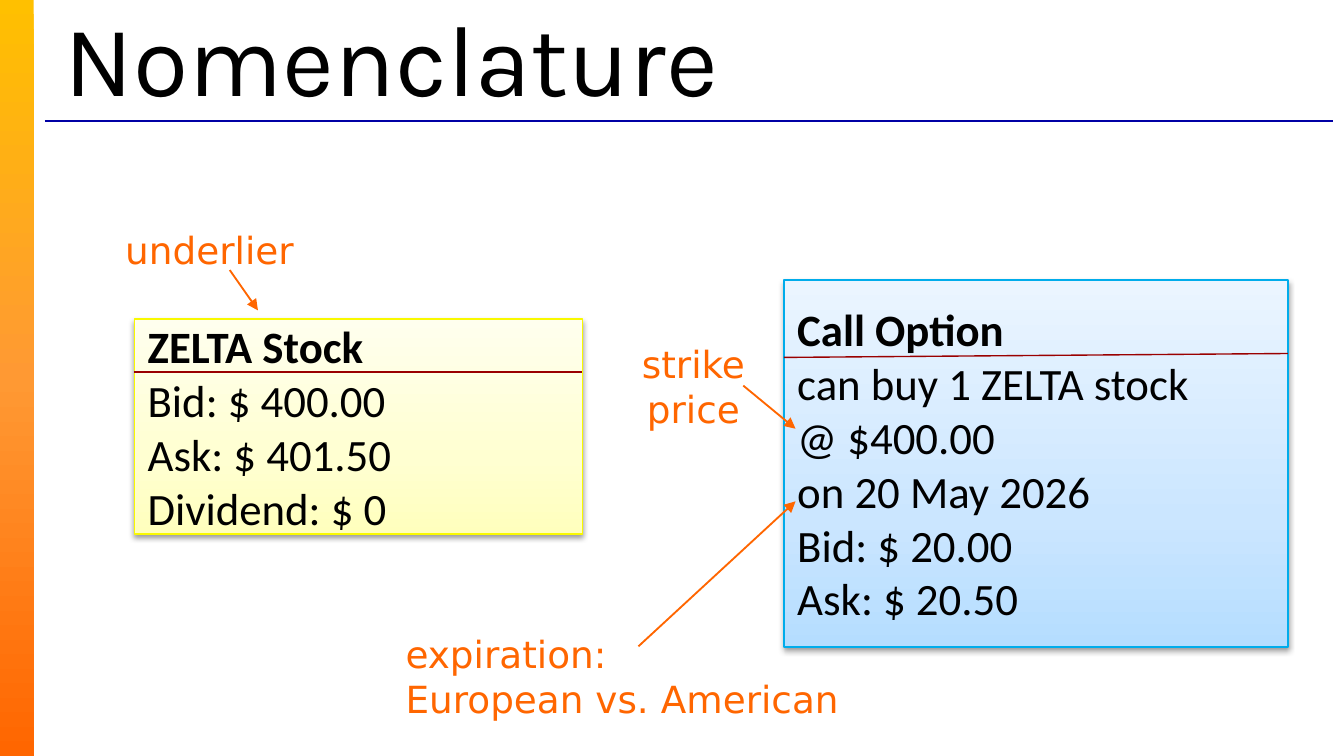
from lxml import etree
from pptx import Presentation
from pptx.dml.color import RGBColor
from pptx.enum import shapes, text
from pptx.oxml import parse_xml
from pptx.oxml.ns import nsdecls, qn
from pptx.util import Pt

ORANGE, DARK_RED, BLACK = "FF6600", "9A0000", "000000"
LEFT, CENTER = text.PP_ALIGN.LEFT, text.PP_ALIGN.CENTER


def color(value):
    return RGBColor.from_string(value)


def write(shape, lines, font, size, ink, align=LEFT, wrap=False, bold_first=False):
    """Fill a shape with one paragraph per line; a vertical tab breaks a line."""
    frame = shape.text_frame
    frame.word_wrap = wrap
    for index, line in enumerate(lines):
        para = frame.paragraphs[0] if index == 0 else frame.add_paragraph()
        para.text = line
        para.alignment = align
        style = {"name": font, "size": Pt(size), "bold": bold_first and index == 0}
        for span in para.runs:
            for key, value in style.items():
                setattr(span.font, key, value)
            span.font.color.rgb = color(ink)
    return frame


def add_gradient_box(page, place, stops, angle, border=None):
    box = page.shapes.add_shape(shapes.MSO_SHAPE.RECTANGLE, *map(Pt, place))
    box.shadow.inherit = False
    marks = "".join(
        f'<a:gs pos="{position * 1000}"><a:srgbClr val="{value}"/></a:gs>'
        for position, value in stops)
    gradient = parse_xml(
        f'<a:gradFill {nsdecls("a")} rotWithShape="1"><a:gsLst>{marks}</a:gsLst>'
        f'<a:lin ang="{angle * 60000}" scaled="0"/></a:gradFill>')
    box._element.spPr.find(qn("a:prstGeom")).addnext(gradient)
    if border:
        box.line.color.rgb = color(border)
        box.line.width = Pt(0.75)
    else:
        box.line.fill.background()
    return box


def add_card(page, place, stops, border, lines):
    box = add_gradient_box(page, place, stops, 270, border)
    effects = box._element.spPr.find(qn("a:effectLst"))
    effects.append(parse_xml(
        f'<a:outerShdw {nsdecls("a")} blurRad="{Pt(3.1)}" dist="{Pt(1.6)}" '
        f'dir="5400000" rotWithShape="0"><a:srgbClr val="{BLACK}">'
        '<a:alpha val="38000"/></a:srgbClr></a:outerShdw>'))
    frame = write(box, lines, "Calibri", 24, BLACK, bold_first=True)
    frame.vertical_anchor = text.MSO_ANCHOR.MIDDLE


def add_label(page, place, words, align=LEFT, wrap=False):
    box = page.shapes.add_textbox(*map(Pt, place))
    frame = write(box, [words], "DejaVu Sans", 20, ORANGE, align, wrap)
    frame.auto_size = text.MSO_AUTO_SIZE.SHAPE_TO_FIT_TEXT


def add_line(page, ends, ink, width=0.75, arrow=False):
    line = page.shapes.add_connector(shapes.MSO_CONNECTOR.STRAIGHT, *map(Pt, ends))
    line.line.color.rgb = color(ink)
    line.line.width = Pt(width)
    if arrow:
        etree.SubElement(line.line._get_or_add_ln(), qn("a:tailEnd"), type="triangle")
    etree.SubElement(line._element.spPr, qn("a:effectLst"))


def add_title(page, words):
    box = page.shapes.add_textbox(Pt(27.4), Pt(10.8), Pt(690), Pt(38.2))
    frame = write(box, [words], "Karla", 54, BLACK, wrap=True)
    frame.vertical_anchor = text.MSO_ANCHOR.MIDDLE


def main():
    deck = Presentation()
    deck.slide_width, deck.slide_height = Pt(720), Pt(405)
    page = deck.slides.add_slide(deck.slide_layouts[6])

    add_gradient_box(page, (0, 0, 18, 405),
                     [(0, "FFC000"), (50, "FF9933"), (100, ORANGE)], 90)
    add_line(page, (24, 64.8, 714, 64.8), "0000A5")
    add_title(page, "Nomenclature")

    add_card(page, (72, 171, 240, 115.2),
             [(0, "FFFFBD"), (35, "FFFFD1"), (100, "FFFFEE")], "F9F900",
             ["ZELTA Stock", "Bid: $ 400.00\vAsk: $ 401.50", "Dividend: $ 0"])
    add_line(page, (72, 199.4, 312, 199.4), DARK_RED)
    add_card(page, (420, 150, 270, 196.6),
             [(0, "B5DDFF"), (35, "CBE6FF"), (100, "EBF5FF")], "00ACEB",
             ["Call Option", "can buy 1 ZELTA stock\v@ $400.00",
              "on 20 May 2026", "Bid: $ 20.00", "Ask: $ 20.50"])
    add_line(page, (420, 191.5, 690, 189.4), DARK_RED)

    add_label(page, (59.8, 118.1, 105, 31.5), "underlier", CENTER)
    add_label(page, (332.6, 179.3, 77.8, 55.4), "strike price", CENTER, wrap=True)
    add_label(page, (210.2, 334.8, 247, 55.4), "expiration:\vEuropean vs. American")
    for ends in ((123.1, 144.7, 138.2, 166.3),
                 (398.2, 206.6, 426.2, 229.7),
                 (342, 346.3, 426.2, 268.6)):
        add_line(page, ends, ORANGE, 1, arrow=True)

    deck.save("out.pptx")


if __name__ == "__main__":
    main()
